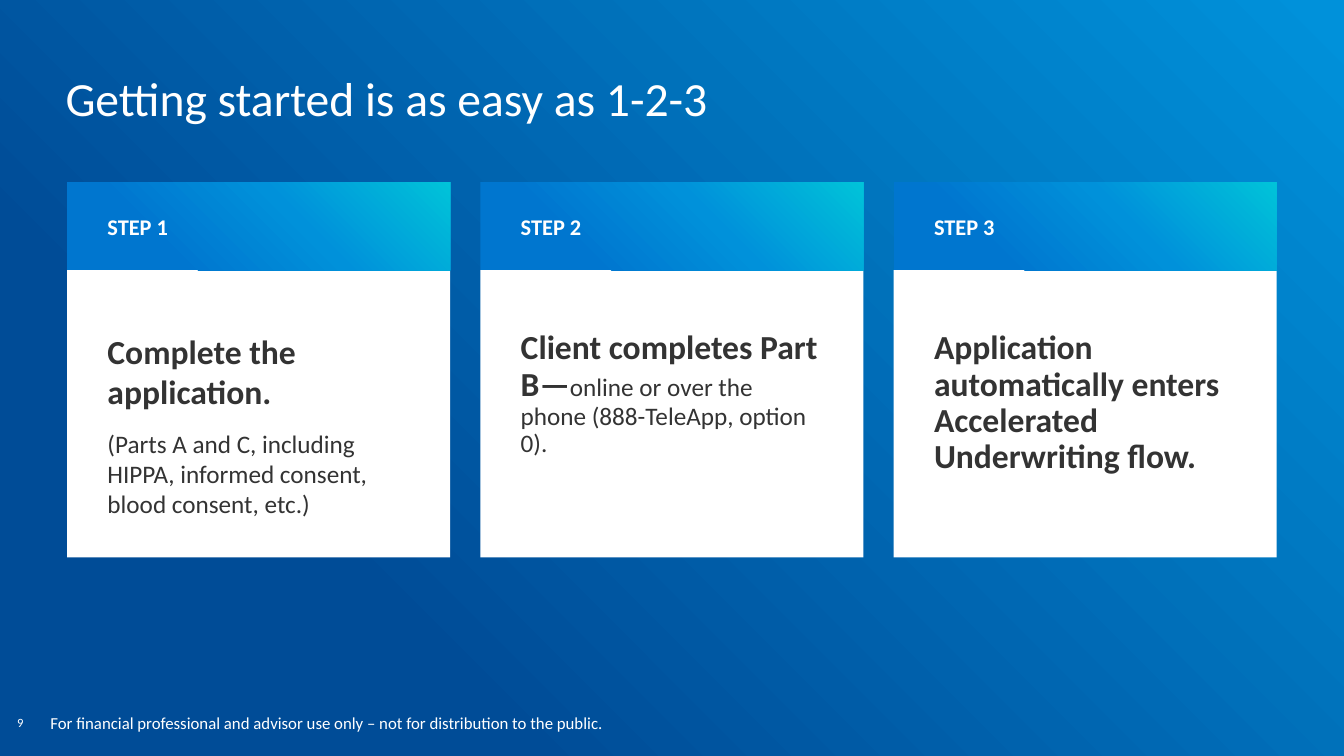
import copy
from dataclasses import dataclass

import pptx
import pptx.dml.color
import pptx.enum.shapes
import pptx.enum.text
import pptx.oxml.ns
import pptx.util

Pt = pptx.util.Pt
ANCHOR = pptx.enum.text.MSO_ANCHOR
LEFT = pptx.enum.text.PP_ALIGN.LEFT

TITLE = "Getting started is as easy as 1-2-3"
PAGE_NUMBER = "9"
DISCLAIMER = ("For financial professional and advisor use only – "
              "not for distribution to the public.")

# Each step: heading, line spacing, paragraphs of (space after, [(text, is_lead)])
STEPS = [
    ("STEP 1", 1.0, [
        (12, [("Complete the application.", True)]),
        (0, [("(Parts A and C, including HIPPA, informed consent, "
              "blood consent, etc.)", False)]),
    ]),
    ("STEP 2", 0.9, [
        (8, [("Client completes Part B—", True),
             ("online or over the phone (888-TeleApp, option 0).", False)]),
    ]),
    ("STEP 3", 0.9, [
        (12, [("Application automatically enters Accelerated "
               "Underwriting flow.", True)]),
    ]),
]


@dataclass(frozen=True)
class Theme:
    font: str = "Calibri"
    white: str = "FFFFFF"
    ink: str = "333333"
    backdrop: tuple = ((0.25, "004C97"), (0.99, "0091DA"))
    header: tuple = ((0.25, "0076CF"), (0.6, "0091DA"), (1, "00C3D9"))
    gradient_angle: int = 45
    title_size: int = 34
    lead_size: int = 24
    detail_size: int = 18
    step_size: int = 16
    disclaimer_size: int = 12
    page_size: int = 9


THEME = Theme()

SLIDE_WIDTH, SLIDE_HEIGHT = 960, 540
CARD_LEFT, CARD_WIDTH, CARD_GAP = 48, 273.6, 21.6
HEADER_TOP, HEADER_HEIGHT = 130.3, 62.7
BODY_TOP, BODY_HEIGHT = HEADER_TOP + HEADER_HEIGHT, 205.2
HEADER_INSETS = (28.8, 3.6, 28.8, 3.6)
BODY_INSETS = (28.8, 43.2, 28.8, 28.8)


def rgb(value):
    return pptx.dml.color.RGBColor.from_string(value)


def apply_gradient(fill, owner, stops):
    """Fill with any number of stops; owner is the XML element holding the fill."""
    fill.gradient()
    fill.gradient_angle = THEME.gradient_angle
    stop_list = next(owner.iter(pptx.oxml.ns.qn("a:gsLst")))
    for _ in range(len(stops) - len(stop_list)):
        stop_list.append(copy.deepcopy(stop_list[-1]))
    for stop, (position, color) in zip(fill.gradient_stops, stops):
        stop.position = position
        stop.color.rgb = rgb(color)


def style_run(run, size, color, bold=False):
    run.font.name = THEME.font
    run.font.size = Pt(size)
    run.font.bold = bold
    run.font.color.rgb = rgb(color)


def set_frame(frame, anchor, insets=(0, 0, 0, 0)):
    frame.word_wrap = True
    frame.auto_size = pptx.enum.text.MSO_AUTO_SIZE.NONE
    frame.vertical_anchor = anchor
    (frame.margin_left, frame.margin_top,
     frame.margin_right, frame.margin_bottom) = map(Pt, insets)


def write_line(frame, text, size, bold=False):
    """Put one white, left-aligned line in the frame."""
    frame.text = text
    line = frame.paragraphs[0]
    line.alignment = LEFT
    style_run(line.runs[0], size, THEME.white, bold)
    return line


def add_panel(slide, left, top, height):
    panel = slide.shapes.add_shape(
        pptx.enum.shapes.MSO_SHAPE.RECTANGLE,
        Pt(left), Pt(top), Pt(CARD_WIDTH), Pt(height))
    panel.shadow.inherit = False
    panel.line.fill.background()
    return panel


def add_body(slide, left, line_spacing, paragraphs):
    body = add_panel(slide, left, BODY_TOP, BODY_HEIGHT)
    body.fill.solid()
    body.fill.fore_color.rgb = rgb(THEME.white)
    frame = body.text_frame
    set_frame(frame, ANCHOR.TOP, BODY_INSETS)
    for index, (space_after, pieces) in enumerate(paragraphs):
        paragraph = frame.add_paragraph() if index else frame.paragraphs[0]
        paragraph.alignment = LEFT
        paragraph.line_spacing = line_spacing
        paragraph.space_after = Pt(space_after)
        for text, is_lead in pieces:
            run = paragraph.add_run()
            run.text = text
            size = THEME.lead_size if is_lead else THEME.detail_size
            style_run(run, size, THEME.ink, is_lead)


def add_header(slide, left, heading):
    header = add_panel(slide, left, HEADER_TOP, HEADER_HEIGHT)
    apply_gradient(header.fill, header._element, THEME.header)
    set_frame(header.text_frame, ANCHOR.MIDDLE, HEADER_INSETS)
    write_line(header.text_frame, heading, THEME.step_size, bold=True)


def add_note(slide, box, text, size):
    note = slide.shapes.add_textbox(*map(Pt, box))
    set_frame(note.text_frame, ANCHOR.BOTTOM)
    return write_line(note.text_frame, text, size)


def main():
    deck = pptx.Presentation()
    deck.slide_width, deck.slide_height = Pt(SLIDE_WIDTH), Pt(SLIDE_HEIGHT)
    slide = deck.slides.add_slide(deck.slide_layouts.get_by_name("Title Only"))
    apply_gradient(slide.background.fill, slide._element, THEME.backdrop)

    title = slide.shapes.title
    title.left, title.top, title.width, title.height = map(Pt, (46.8, 49, 864, 36))
    set_frame(title.text_frame, ANCHOR.TOP)
    write_line(title.text_frame, TITLE, THEME.title_size)

    add_note(slide, (12.2, 491.8, 33, 29.5), PAGE_NUMBER, THEME.page_size)

    for index, (heading, line_spacing, paragraphs) in enumerate(STEPS):
        left = CARD_LEFT + index * (CARD_WIDTH + CARD_GAP)
        add_body(slide, left, line_spacing, paragraphs)
        add_header(slide, left, heading)

    disclaimer = add_note(slide, (36, 509.8, 803.5, 14), DISCLAIMER,
                          THEME.disclaimer_size)
    disclaimer.line_spacing = 0.9

    deck.save("out.pptx")


if __name__ == "__main__":
    main()
